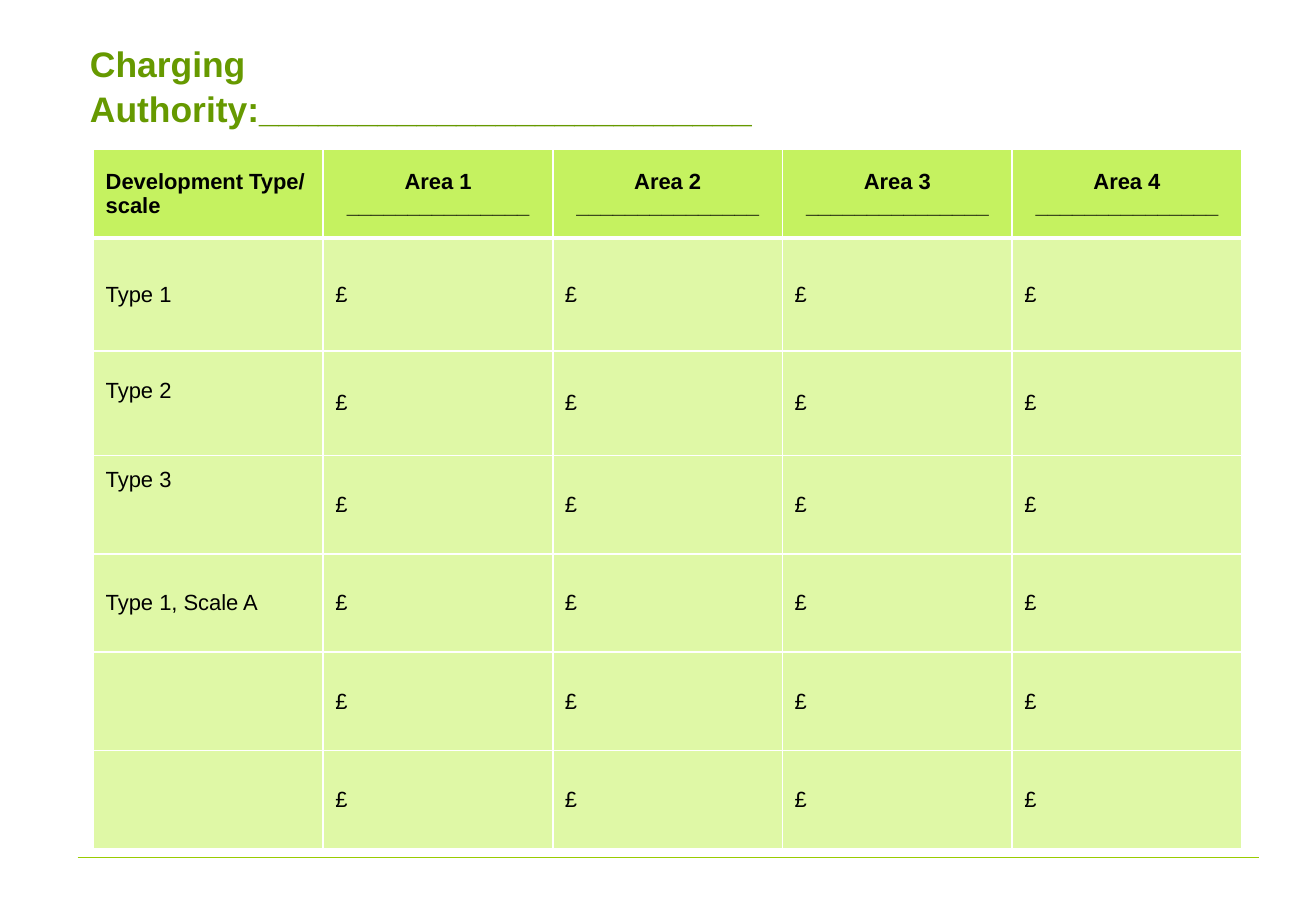
from lxml import etree
from pptx import Presentation
from pptx import util as u
from pptx.dml.color import RGBColor
from pptx.enum import shapes, text
from pptx.oxml import ns

WHITE = RGBColor(0xFF, 0xFF, 0xFF)
BLACK = RGBColor(0x00, 0x00, 0x00)
TITLE_GREEN = RGBColor(0x66, 0x99, 0x00)
RULE_GREEN = RGBColor(0x99, 0xCC, 0x00)
HEADER_GREEN = RGBColor(0xC5, 0xF2, 0x60)
BODY_GREEN = RGBColor(0xDF, 0xF8, 0xA6)

AREAS = ["Area 1", "Area 2", "Area 3", "Area 4"]
TYPES = ["Type 1", "Type 2", "Type 3", "Type 1, Scale A", "", ""]
ROW_HEIGHTS = [0.73, 0.93, 0.86] + [0.81] * 4
COLUMN_WIDTH = 1.89
LABEL_LIFTS = {"Type 2": 0.2, "Type 3": 0.4}


class ChargingSlide:
    font_name = "Arial"
    title_size = u.Pt(21)
    table_size = u.Pt(13)

    def __init__(self, presentation):
        self.width = presentation.slide_width
        self.height = presentation.slide_height
        self.slide = presentation.slides.add_slide(presentation.slide_layouts[5])

    def across(self, share):
        return round(self.width * share / 100)

    def down(self, share):
        return round(self.height * share / 100)

    def style(self, paragraph, size, color, bold, alignment):
        paragraph.alignment = alignment
        font = paragraph.font
        font.name, font.size, font.bold = self.font_name, size, bold
        font.color.rgb = color

    def title(self, words, left, top, width, height):
        shape = self.slide.shapes.title
        shape.left, shape.top = self.across(left), self.down(top)
        shape.width, shape.height = self.across(width), self.down(height)
        frame = shape.text_frame
        frame.text = words
        frame.word_wrap = True
        frame.auto_size = text.MSO_AUTO_SIZE.NONE
        frame.vertical_anchor = text.MSO_ANCHOR.MIDDLE
        paragraph = frame.paragraphs[0]
        paragraph.line_spacing = 1.05
        self.style(paragraph, self.title_size, TITLE_GREEN, True, text.PP_ALIGN.LEFT)

    def rule(self, left, right, top):
        line = self.slide.shapes.add_connector(
            shapes.MSO_CONNECTOR.STRAIGHT,
            self.across(left), self.down(top), self.across(right), self.down(top))
        line.line.color.rgb = RULE_GREEN
        line.line.width = u.Pt(0.75)
        etree.SubElement(line._element.spPr, ns.qn("a:effectLst"))

    def borders(self, cell, top, bottom):
        properties = cell._tc.get_or_add_tcPr()
        for side, points in (("L", 1), ("R", 1), ("T", top), ("B", bottom)):
            line = etree.SubElement(properties, ns.qn(f"a:ln{side}"), w=str(u.Pt(points)))
            fill = etree.SubElement(line, ns.qn("a:solidFill"))
            etree.SubElement(fill, ns.qn("a:srgbClr"), val=str(WHITE))

    def cell(self, cell, words, row, centered):
        header = row == 0
        self.borders(cell, 3 if row == 1 else 1, 3 if header else 1)
        cell.fill.solid()
        cell.fill.fore_color.rgb = HEADER_GREEN if header else BODY_GREEN
        cell.vertical_anchor = text.MSO_ANCHOR.MIDDLE
        cell.margin_bottom = u.Inches(0.05 + LABEL_LIFTS.get(words, 0))
        cell.text = words
        alignment = text.PP_ALIGN.CENTER if centered else text.PP_ALIGN.LEFT
        for paragraph in cell.text_frame.paragraphs:
            self.style(paragraph, self.table_size, BLACK, header, alignment)

    def table(self, rows, left, top):
        frame = self.slide.shapes.add_table(
            len(rows), len(rows[0]), self.across(left), self.down(top),
            u.Inches(COLUMN_WIDTH * len(rows[0])), u.Inches(sum(ROW_HEIGHTS)))
        table = frame.table
        table.horz_banding = False
        for column in table.columns:
            column.width = u.Inches(COLUMN_WIDTH)
        for row, values in enumerate(rows):
            table.rows[row].height = u.Inches(ROW_HEIGHTS[row])
            for column, words in enumerate(values):
                self.cell(table.cell(row, column), words, row, row == 0 and column > 0)


def main():
    presentation = Presentation()
    presentation.slide_width = u.Inches(10.83)
    presentation.slide_height = u.Inches(7.5)
    page = ChargingSlide(presentation)
    page.rule(5.91, 95.66, 94.13)
    page.title("Charging Authority:" + "_" * 25, 5.91, 4, 55.96, 10.67)
    header = ["Development Type/ scale"] + [f"{area}\n{'_' * 15}" for area in AREAS]
    charges = [[kind] + ["£"] * len(AREAS) for kind in TYPES]
    page.table([header] + charges, 7.11, 16.4)
    presentation.save("out.pptx")


if __name__ == "__main__":
    main()
